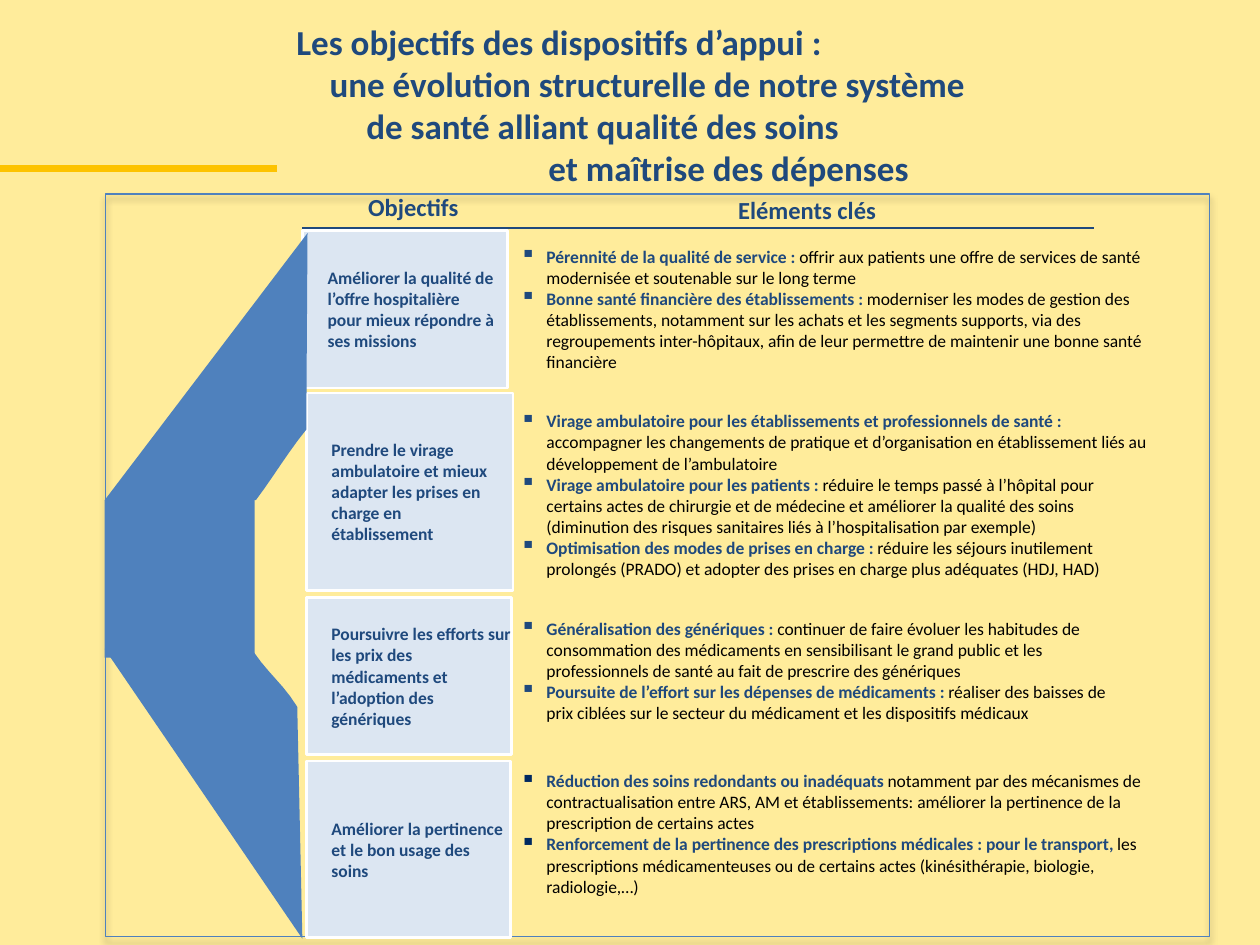
from dataclasses import dataclass

from lxml import etree
from pptx import Presentation
from pptx import util as u
from pptx.dml import color
from pptx.enum import shapes, text
from pptx.oxml import ns

NAVY, BLUE, PALE, YELLOW = "1F497D", "4F81BD", "DCE6F2", "FFEC9B"

TITLE_LINES = [
    ("Les objectifs des dispositifs d’appui :", 1),
    ("une évolution structurelle de notre système", 20),
    ("de santé alliant qualité des soins", 41),
    ("et maîtrise des dépenses", 145),
]

# Each row: goal, goal box, right inset, key elements box, bullet colour, key elements
ROWS = [
    ("Améliorer la qualité de l’offre hospitalière pour mieux répondre à ses missions",
     (172.8, 131.8, 117.4, 90), 5.8, (290.2, 136.8, 374.4, 79.2), NAVY, [
         ("Pérennité de la qualité de service : ",
          "offrir aux patients une offre de services de santé modernisée et soutenable "
          "sur le long terme"),
         ("Bonne santé financière des établissements : ",
          "moderniser les modes de gestion des établissements, notamment sur les achats "
          "et les segments supports, via des regroupements inter-hôpitaux, afin de leur "
          "permettre de maintenir une bonne santé financière")]),
    ("Prendre le virage ambulatoire et mieux adapter les prises en charge en établissement",
     (175, 224.6, 118.1, 113), 5.8, (290.2, 230.4, 374.4, 104.4), NAVY, [
         ("Virage ambulatoire pour les établissements et professionnels de santé : ",
          "accompagner les changements de pratique et d’organisation en établissement "
          "liés au développement de l’ambulatoire"),
         ("Virage ambulatoire pour les patients : ",
          "réduire le temps passé à l’hôpital pour certains actes de chirurgie et de "
          "médecine et améliorer la qualité des soins (diminution des risques sanitaires "
          "liés à l’hospitalisation par exemple)"),
         ("Optimisation des modes de prises en charge : ",
          "réduire les séjours inutilement prolongés (PRADO) et adopter des prises en "
          "charge plus adéquates (HDJ, HAD)")]),
    ("Poursuivre les efforts sur les prix des médicaments et l’adoption des\vgénériques",
     (175, 341.3, 117.4, 90), 0, (290.2, 349.2, 362.9, 67.7), NAVY, [
         ("Généralisation des génériques : ",
          "continuer de faire évoluer les habitudes de consommation des médicaments en "
          "sensibilisant le grand public et les professionnels de santé au fait de "
          "prescrire des génériques"),
         ("Poursuite de l’effort sur les dépenses de médicaments : ",
          "réaliser des baisses de prix ciblées sur le secteur du médicament et les "
          "dispositifs médicaux")]),
    ("Améliorer la pertinence et le bon usage des soins",
     (175, 434.9, 116.6, 100.8), 0, (290.2, 436.3, 374.4, 79.9), "002960", [
         ("Réduction des soins redondants ou inadéquats ",
          "notamment par des mécanismes de contractualisation entre ARS, AM et "
          "établissements: améliorer la pertinence de la prescription de certains actes"),
         ("Renforcement de la pertinence des prescriptions médicales : pour le transport, ",
          "les prescriptions médicamenteuses ou de certains actes (kinésithérapie, "
          "biologie, radiologie,…)")]),
]


def rgb(value):
    return color.RGBColor.from_string(value)


def points(values):
    return [u.Pt(value) for value in values]


def add_element(parent, tag, **attributes):
    element = etree.SubElement(parent, ns.qn(tag))
    for name, value in attributes.items():
        element.set(name, str(value))
    return element


def curve(start, first, second, end, steps=6):
    """Return the points of a cubic curve that follow its start."""
    result = []
    for step in range(1, steps + 1):
        t = step / steps
        weights = ((1 - t) ** 3, 3 * t * (1 - t) ** 2, 3 * t * t * (1 - t), t ** 3)
        result.append(tuple(sum(weight * point[axis] for weight, point in
                                zip(weights, (start, first, second, end)))
                            for axis in (0, 1)))
    return result


@dataclass
class Deck:
    slide: object
    font: str = "Calibri"
    size: float = 10

    def style(self, run, size=None, bold=True, fill=NAVY):
        run.font.name = self.font
        run.font.size = u.Pt(size or self.size)
        run.font.bold = bold
        run.font.color.rgb = rgb(fill)

    def paint(self, shape, fill=None, line=None, width=0.75):
        shape.shadow.inherit = False
        if fill:
            shape.fill.solid()
            shape.fill.fore_color.rgb = rgb(fill)
        else:
            shape.fill.background()
        if line:
            shape.line.color.rgb = rgb(line)
            shape.line.width = u.Pt(width)
        else:
            shape.line.fill.background()

    def rectangle(self, box, **look):
        shape = self.slide.shapes.add_shape(shapes.MSO_SHAPE.RECTANGLE, *points(box))
        self.paint(shape, **look)
        return shape

    def frame(self, box):
        shape = self.rectangle(box, line=BLUE)
        effects = shape._element.spPr.find(ns.qn("a:effectLst"))
        shadow = add_element(effects, "a:outerShdw", blurRad=u.Pt(4), dist=u.Pt(3),
                             dir=90 * 60000, rotWithShape=0)
        tint = add_element(shadow, "a:srgbClr", val="000000")
        add_element(tint, "a:alpha", val=40000)

    def outline(self, corners, fill):
        start, *others = [points(corner) for corner in corners]
        builder = self.slide.shapes.build_freeform(*start)
        builder.add_line_segments(others, close=True)
        self.paint(builder.convert_to_shape(), fill)

    def line(self, start, end, stroke, width):
        connector = self.slide.shapes.add_connector(
            shapes.MSO_CONNECTOR.STRAIGHT, *points(start + end))
        connector.line.color.rgb = rgb(stroke)
        connector.line.width = u.Pt(width)
        add_element(connector._element.spPr, "a:effectLst")

    def set_frame(self, frame, anchor, insets):
        frame.word_wrap = True
        frame.vertical_anchor = anchor
        (frame.margin_left, frame.margin_top,
         frame.margin_right, frame.margin_bottom) = points(insets)

    def text_box(self, box, anchor, insets=(7.2, 3.6, 7.2, 3.6)):
        frame = self.slide.shapes.add_textbox(*points(box)).text_frame
        self.set_frame(frame, anchor, insets)
        return frame

    def title(self, box, lines):
        frame = self.text_box(box, text.MSO_ANCHOR.TOP)
        frame.text = "\n".join(words for words, _ in lines)
        for paragraph, (_, indent) in zip(frame.paragraphs, lines):
            paragraph._p.get_or_add_pPr().set("marL", str(u.Pt(indent)))
            self.style(paragraph.runs[0], 20)

    def heading(self, box, words):
        frame = self.text_box(box, text.MSO_ANCHOR.BOTTOM, (0, 0, 0, 1.4))
        frame.text = words
        frame.paragraphs[0].alignment = text.PP_ALIGN.CENTER
        self.style(frame.paragraphs[0].runs[0], 14)

    def goal(self, box, words, right_inset):
        shape = self.rectangle(box, fill=PALE, line="FFFFFF", width=1.5)
        frame = shape.text_frame
        self.set_frame(frame, text.MSO_ANCHOR.MIDDLE, (14.4, 5.8, right_inset, 5.8))
        frame.text = words
        frame.paragraphs[0].alignment = text.PP_ALIGN.LEFT
        for run in frame.paragraphs[0].runs:
            self.style(run)

    def bullets(self, box, items, bullet_colour):
        frame = self.text_box(box, text.MSO_ANCHOR.MIDDLE)
        frame.text = "\n".join(lead for lead, _ in items)
        for paragraph, (_, detail) in zip(frame.paragraphs, items):
            properties = paragraph._p.get_or_add_pPr()
            properties.set("marL", str(u.Pt(15)))
            properties.set("indent", str(u.Pt(-15)))
            add_element(add_element(properties, "a:buClr"), "a:srgbClr", val=bullet_colour)
            add_element(properties, "a:buSzPct", val=125000)
            add_element(properties, "a:buChar", char="▪")
            self.style(paragraph.runs[0])
            run = paragraph.add_run()
            run.text = detail
            self.style(run, bold=False, fill="000000")


def main():
    presentation = Presentation()
    presentation.slide_width, presentation.slide_height = points((720, 540))
    slide = presentation.slides.add_slide(presentation.slide_layouts[6])
    slide.background.fill.solid()
    slide.background.fill.fore_color.rgb = rgb(YELLOW)

    deck = Deck(slide)
    deck.line((0, 96.5), (158.4, 96.5), "FDC300", 4)
    deck.frame((60.5, 110.9, 630.7, 424.1))
    for goal, goal_box, right_inset, items_box, bullet_colour, items in ROWS:
        deck.goal(goal_box, goal, right_inset)
        deck.bullets(items_box, items, bullet_colour)

    deck.rectangle((59.8, 285.8, 85.7, 90), fill=BLUE)
    upper, lower = (175, 245.5), (169.9, 403.9)
    deck.outline([(59.8, 285.8), (175.7, 133.2), upper,
                  *curve(upper, (164.9, 257.8), (155.5, 273.6), (146.2, 285.8))], BLUE)
    deck.outline([(59.8, 370.8), (172.8, 536.4), lower,
                  *curve(lower, (161.3, 390.2), (154.1, 385.9), (144.7, 372.2))], BLUE)

    deck.heading((172.8, 110.9, 126.7, 17.3), "Objectifs")
    deck.heading((293.8, 100.8, 334.8, 28.8), "Eléments clés")
    deck.line((172.8, 130.3), (625, 130.3), NAVY, 0.75)
    deck.title((161.3, 7.9, 453.6, 104), TITLE_LINES)
    presentation.save("out.pptx")


if __name__ == "__main__":
    main()
